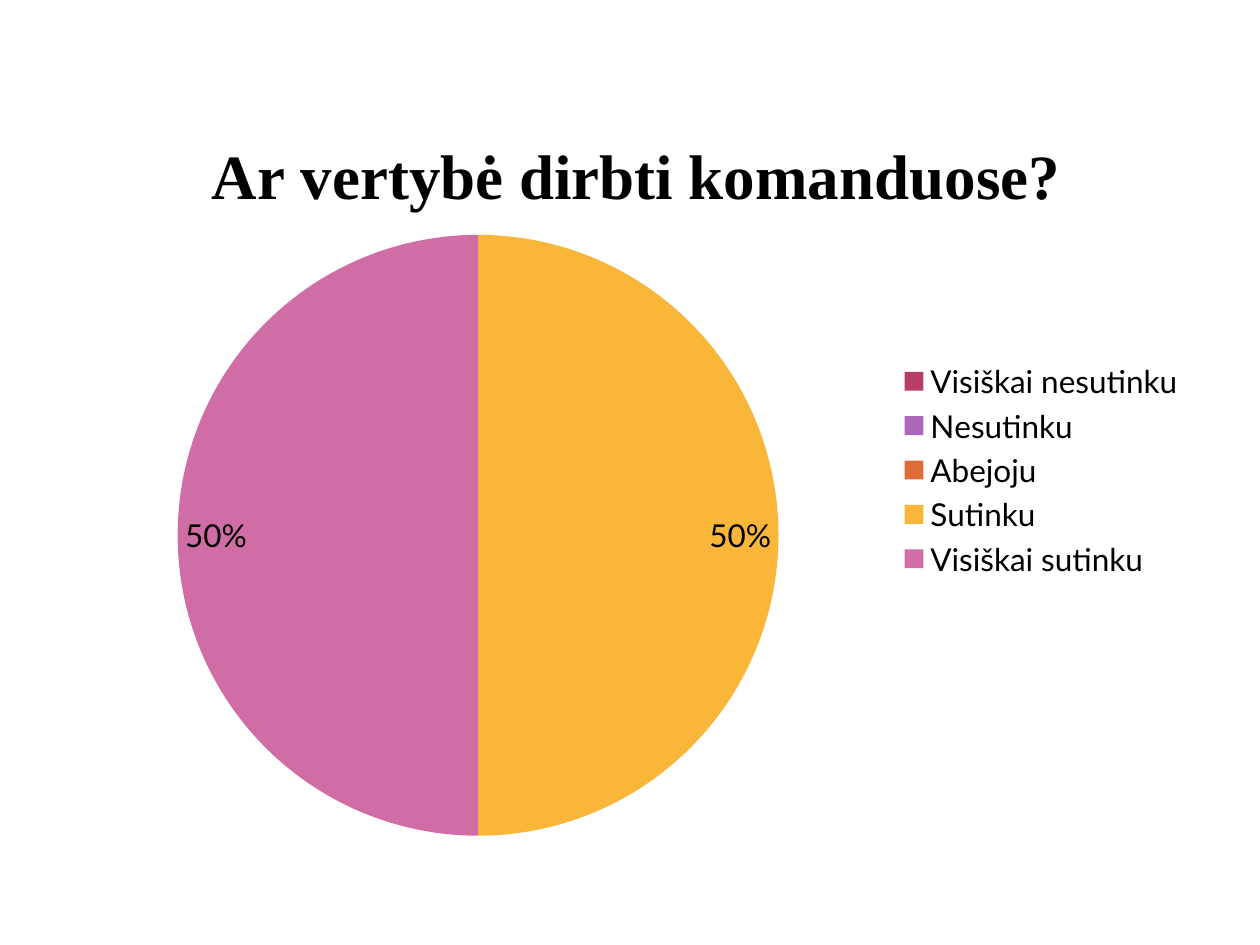
"""Build a slide with a pie chart of survey answers about teamwork."""
import pptx
import pptx.chart.data
import pptx.dml.color
import pptx.enum.chart
import pptx.oxml
import pptx.oxml.ns
import pptx.util

Pt = pptx.util.Pt
RGBColor = pptx.dml.color.RGBColor

BLACK = RGBColor(0x00, 0x00, 0x00)
CRIMSON = RGBColor(0xB8, 0x3D, 0x68)
PURPLE = RGBColor(0xAC, 0x66, 0xBB)
ORANGE = RGBColor(0xDE, 0x6C, 0x36)
AMBER = RGBColor(0xF9, 0xB6, 0x39)
PINK = RGBColor(0xCF, 0x6D, 0xA4)

QUESTION = "Ar vertybė dirbti komanduose?"
ANSWERS = [
    ("Visiškai nesutinku", None, CRIMSON),
    ("Nesutinku", None, PURPLE),
    ("Abejoju", None, ORANGE),
    ("Sutinku", 50, AMBER),
    ("Visiškai sutinku", 50, PINK),
]


def manual_layout(target, **fractions):
    namespace = pptx.oxml.ns.nsdecls("c")
    inner = '<c:layoutTarget val="inner"/>' if "w" in fractions else ""
    modes = '<c:xMode val="edge"/><c:yMode val="edge"/>'
    sizes = "".join(f'<c:{key} val="{value}"/>' for key, value in fractions.items())
    layout = pptx.oxml.parse_xml(
        f"<c:layout {namespace}><c:manualLayout>{inner}{modes}{sizes}"
        "</c:manualLayout></c:layout>"
    )
    for previous in target.findall(pptx.oxml.ns.qn("c:layout")):
        target.remove(previous)
    text = target.find(pptx.oxml.ns.qn("c:tx"))
    target.insert(0 if text is None else 1, layout)


presentation = pptx.Presentation()
presentation.slide_width = Pt(720)
presentation.slide_height = Pt(540)
slide = presentation.slides.add_slide(presentation.slide_layouts[6])

survey = pptx.chart.data.CategoryChartData(number_format="General")
survey.categories = [answer for answer, share, color in ANSWERS]
survey.add_series(QUESTION, [share for answer, share, color in ANSWERS])
pie = slide.shapes.add_chart(
    pptx.enum.chart.XL_CHART_TYPE.PIE, Pt(36.7), Pt(49), Pt(648), Pt(439.2), survey
).chart
pie.font.name = "Lato"
pie.font.size = Pt(18)
pie.font.color.rgb = BLACK

pie.has_title = True
heading = pie.chart_title.text_frame.paragraphs[0].add_run()
heading.text = QUESTION
heading.font.name = "Times New Roman"
heading.font.size = Pt(36)
heading.font.bold = True
heading.font.color.rgb = BLACK
pie.chart_title.include_in_layout = False
manual_layout(pie.chart_title._element, x=0.12, y=0.05)

pie.has_legend = True
pie.legend.position = pptx.enum.chart.XL_LEGEND_POSITION.RIGHT
pie.legend.include_in_layout = False

plot = pie.plots[0]
plot.vary_by_categories = True
for position, (answer, share, color) in enumerate(ANSWERS):
    slice_fill = plot.series[0].points[position].format.fill
    slice_fill.solid()
    slice_fill.fore_color.rgb = color

plot.has_data_labels = True
percentages = plot.data_labels
percentages.show_value = False
percentages.show_percentage = True
percentages.number_format = "0%"
percentages.number_format_is_linked = False
percentages.position = pptx.enum.chart.XL_LABEL_POSITION.INSIDE_END
manual_layout(plot._element.getparent(), x=0.1, y=0.19, w=0.53, h=0.79)

presentation.save("out.pptx")
